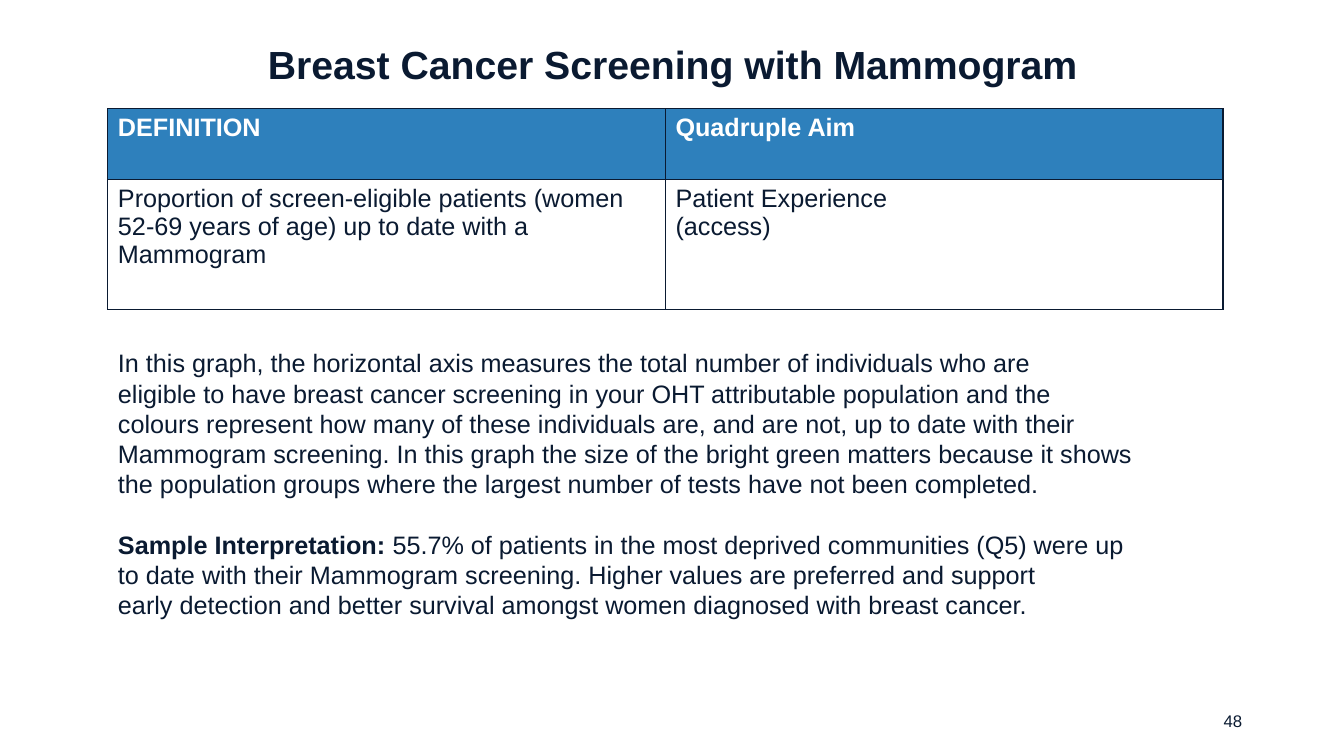
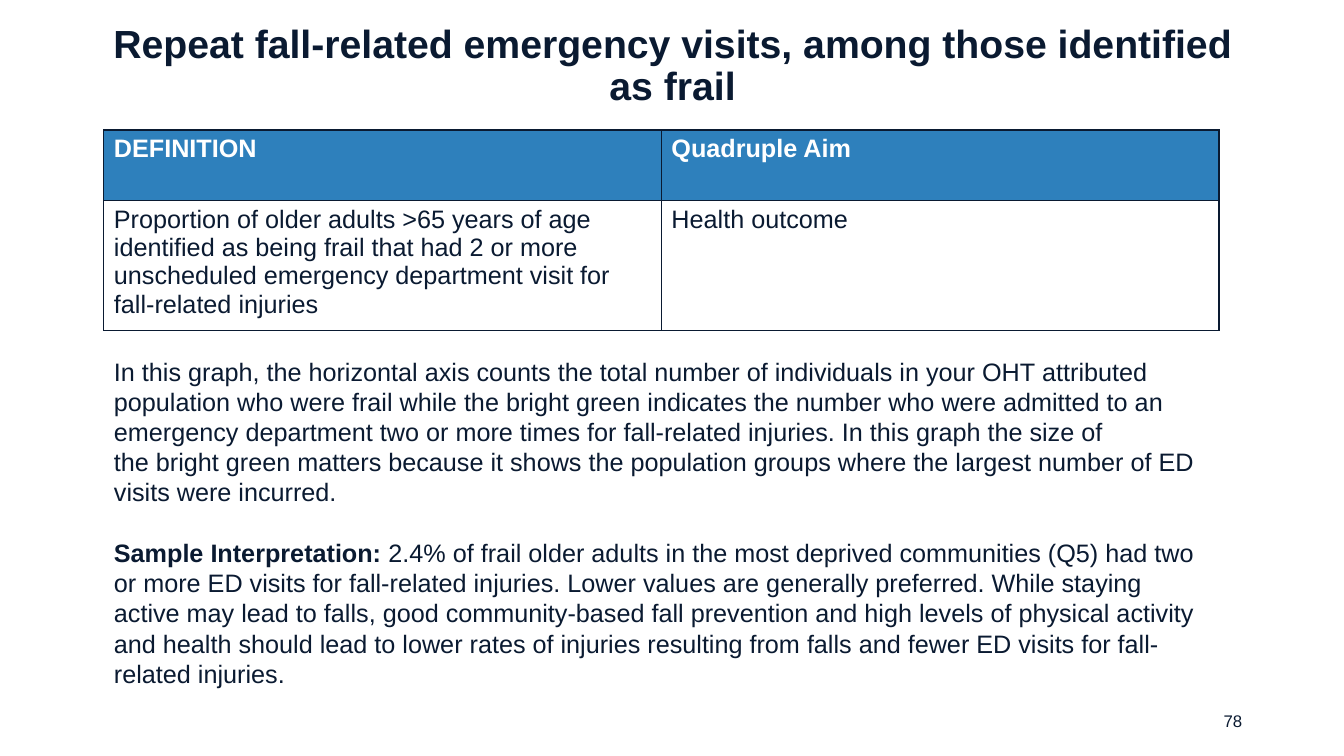
from lxml import etree
from pptx import Presentation
from pptx.dml.color import RGBColor
from pptx.enum import text as tx
from pptx.oxml import ns
from pptx.util import Inches, Pt

# Shared style
FONT = "Arial"
INK, BLUE, WHITE = "0A1A31", "2E80BC", "FFFFFF"
LEFT, MID, RIGHT = tx.PP_ALIGN.LEFT, tx.PP_ALIGN.CENTER, tx.PP_ALIGN.RIGHT
TOP, CENTRE = tx.MSO_ANCHOR.TOP, tx.MSO_ANCHOR.MIDDLE
HEADS = ["DEFINITION", "Quadruple Aim"]
COL, ROWS = 5.53, [0.7, 1.29]
HARD = chr(160)  # no-break space, typed as ~ in the texts below

# What each slide says and where its parts sit
SLIDES = [
    dict(
        num="48",
        title="Breast Cancer Screening with Mammogram",
        grid=(1.07, 1.08),
        cells=[
            ["Proportion of screen-eligible patients (women 52-69 years of age) "
             "up to date with a Mammogram"],
            ["Patient Experience", "(access)"],
        ],
        box=(1.07, 3.4, 10.32, 3.13),
        graph="In this graph, the horizontal axis measures the total number of "
              "individuals who are eligible~to have breast cancer screening in your "
              "OHT attributable population and the colours~represent how~many of "
              "these individuals~are, and~are not, up to date with their Mammogram "
              "screening. In~this graph the size of the~bright green matters because "
              "it shows the population groups~where the~largest number of tests have "
              "not been completed.",
        sample="55.7% of patients in the most deprived communities (Q5) were up to "
               "date with their Mammogram screening.~Higher values are preferred and "
               "support early~detection and better survival amongst women diagnosed "
               "with breast cancer.",
    ),
    dict(
        num="78",
        title="Repeat fall-related emergency visits, among those identified as frail",
        grid=(1.03, 1.29),
        cells=[
            ["Proportion of older adults >65 years of age identified as being frail "
             "that had 2 or more unscheduled emergency department visit for "
             "fall-related injuries"],
            ["Health outcome"],
        ],
        box=(1.03, 3.48, 11.06, 3.43),
        graph="In this graph, the horizontal axis counts the total number of "
              "individuals in~your~OHT~attributed population who were frail while "
              "the bright green indicates the number who were admitted to an "
              "emergency department two or more times for fall-related injuries. "
              "In~this graph the size of the~bright green matters because it shows "
              "the population~groups where the~largest number of ED visits were "
              "incurred.",
        sample="2.4% of frail older adults in the most deprived communities (Q5) had "
               "two or more ED visits for fall-related injuries. Lower values are "
               "generally preferred. While staying active may lead to falls, good "
               "community-based fall prevention and high levels of physical activity "
               "and health should lead to lower rates of injuries resulting from "
               "falls and fewer ED visits for fall-related injuries.",
    ),
]


def rgb(code):
    return RGBColor.from_string(code)


def place(shape, left, top, width, height):
    shape.left, shape.top = Inches(left), Inches(top)
    shape.width, shape.height = Inches(width), Inches(height)


def write(frame, paras, size=18, color=INK, bold=False, align=LEFT,
          anchor=TOP, line=1.0, gap=0):
    """Fill a frame; a paragraph is a string or a (bold lead, rest) pair."""
    frame.word_wrap = True
    frame.auto_size = tx.MSO_AUTO_SIZE.NONE
    frame.vertical_anchor = anchor
    for i, item in enumerate(paras):
        para = frame.paragraphs[0] if i == 0 else frame.add_paragraph()
        props = para._p.get_or_add_pPr()
        props.set("marL", "0")
        props.set("indent", "0")
        etree.SubElement(props, ns.qn("a:buNone"))
        para.alignment, para.line_spacing = align, line
        para.space_before, para.space_after = Pt(gap if i else 0), Pt(0)
        runs = [(item, bold)] if isinstance(item, str) else zip(item, (True, False))
        for words, heavy in runs:
            run = para.add_run()
            run.text = words.replace("~", HARD)
            font = run.font
            font.name, font.size, font.bold = FONT, Pt(size), heavy
            font.color.rgb = rgb(color)


def border(cell, color=INK, width=1):
    props = cell._tc.get_or_add_tcPr()
    for side in ("lnL", "lnR", "lnT", "lnB"):
        edge = etree.SubElement(props, ns.qn("a:" + side), w=str(Pt(width)))
        fill = etree.SubElement(edge, ns.qn("a:solidFill"))
        etree.SubElement(fill, ns.qn("a:srgbClr"), val=color)


def add_grid(slide, left, top, cells):
    table = slide.shapes.add_table(
        2, 2, Inches(left), Inches(top), Inches(2 * COL), Inches(sum(ROWS))).table
    for row, height in zip(table.rows, ROWS):
        row.height = Inches(height)
    for col, (head, body) in enumerate(zip(HEADS, cells)):
        table.columns[col].width = Inches(COL)
        looks = [([head], BLUE, WHITE, True), (body, WHITE, INK, False)]
        for row, (paras, back, color, bold) in enumerate(looks):
            cell = table.cell(row, col)
            border(cell)
            cell.fill.solid()
            cell.fill.fore_color.rgb = rgb(back)
            write(cell.text_frame, paras, color=color, bold=bold)


def add_page(deck, page):
    slide = deck.slides.add_slide(deck.slide_layouts[1])
    title, body = slide.placeholders
    # Title
    place(title, 0.77, 0.24, 11.8, 0.84)
    write(title.text_frame, [page["title"]], size=28, bold=True, align=MID,
          anchor=CENTRE, line=0.9)
    # Definition table
    add_grid(slide, *page["grid"], page["cells"])
    # Explanation
    place(body, *page["box"])
    write(body.text_frame,
          [page["graph"], ("Sample Interpretation: ", page["sample"])], gap=21.6)
    # Page number
    foot = slide.shapes.add_textbox(0, 0, 0, 0)
    place(foot, 9.42, 6.95, 3, 0.4)
    write(foot.text_frame, [page["num"]], size=12, align=RIGHT, anchor=CENTRE)


def main():
    deck = Presentation()
    deck.slide_width, deck.slide_height = Inches(13.33), Inches(7.5)
    for page in SLIDES:
        add_page(deck, page)
    deck.save("out.pptx")


if __name__ == "__main__":
    main()
